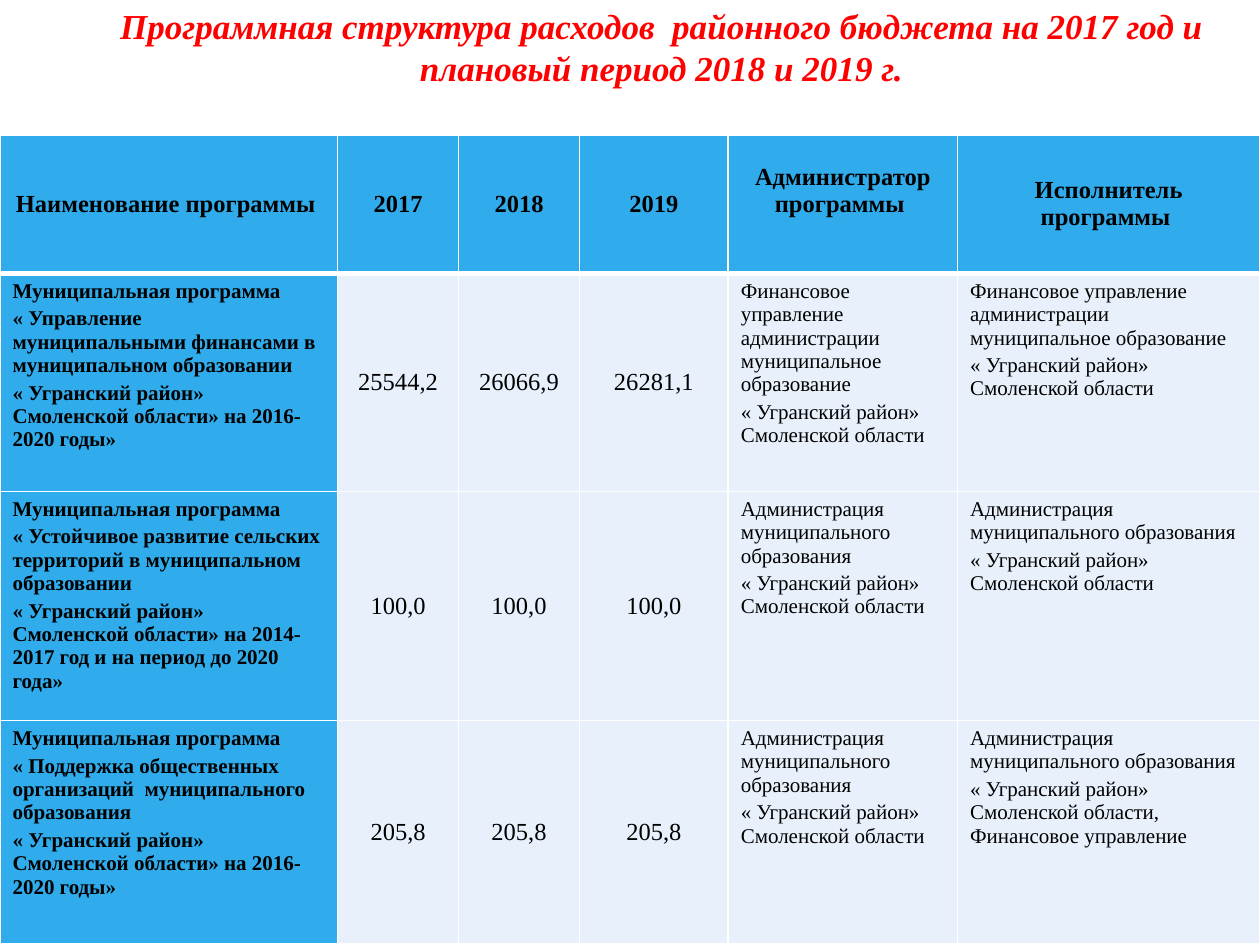
from lxml import etree
from pptx import Presentation
from pptx.dml.color import RGBColor
from pptx.enum.text import MSO_ANCHOR as Anchor, PP_ALIGN as Align
from pptx.oxml.ns import qn
from pptx.util import Inches, Pt

RED = RGBColor(0xFF, 0x00, 0x00)
BLACK = RGBColor(0x00, 0x00, 0x00)
BLUE = RGBColor(0x30, 0xAC, 0xEC)
PALE = RGBColor(0xE8, 0xF1, 0xFB)
WHITE = RGBColor(0xFF, 0xFF, 0xFF)
FONT = "Times New Roman"

TITLE = ("Программная структура расходов  районного бюджета на 2017 год "
         "и плановый период 2018 и 2019 г.")
COLUMN_WIDTHS = [2.68, 0.96, 0.96, 1.18, 1.82, 2.4]
ROW_HEIGHTS = [1.1, 1.73, 1.82, 1.77]
HEADINGS = ["Наименование программы ", "2017", "2018", "2019",
            "Администратор программы ", "Исполнитель программы "]

PROGRAM = "Муниципальная программа"
DISTRICT = "« Угранский район» Смоленской области"
FINANCE = ["Финансовое управление администрации  муниципальное образование",
           DISTRICT]
ADMINISTRATION = ["Администрация муниципального образования", DISTRICT]

# Program name, amounts for 2017-2019, administrator, executor
PROGRAMS = [
    ([PROGRAM,
      "« Управление  муниципальными финансами в муниципальном образовании",
      DISTRICT + "» на 2016-2020 годы»"],
     ["25544,2", "26066,9", "26281,1"], FINANCE, FINANCE),
    ([PROGRAM,
      "« Устойчивое развитие сельских территорий в муниципальном образовании",
      DISTRICT + "» на 2014-2017 год и на период до 2020 года»"],
     ["100,0"] * 3, ADMINISTRATION, ADMINISTRATION),
    ([PROGRAM,
      "« Поддержка общественных организаций  муниципального образования",
      DISTRICT + "» на 2016-2020 годы»"],
     ["205,8"] * 3, ADMINISTRATION,
     [ADMINISTRATION[0], DISTRICT + ", Финансовое управление"]),
]


def add_text(paragraph, text, size, color=BLACK, bold=False, italic=False):
    run = paragraph.add_run()
    run.text = text
    font = run.font
    font.name, font.size = FONT, Pt(size)
    font.bold, font.italic = bold, italic
    font.color.rgb = color


def set_borders(cell, bottom):
    """White lines on all four sides; the bottom one has its own width."""
    properties = cell._tc.get_or_add_tcPr()
    for side, width in (("L", 1), ("R", 1), ("T", 1), ("B", bottom)):
        line = etree.SubElement(properties, qn(f"a:ln{side}"), w=str(Pt(width)))
        fill = etree.SubElement(line, qn("a:solidFill"))
        etree.SubElement(fill, qn("a:srgbClr"), val=str(WHITE))


def fill_cell(cell, lines, size, fill, bold=False, centered=False, bottom=1):
    set_borders(cell, bottom)
    cell.fill.solid()
    cell.fill.fore_color.rgb = fill
    cell.vertical_anchor = Anchor.MIDDLE if centered else Anchor.TOP
    frame = cell.text_frame
    for index, line in enumerate(lines):
        paragraph = frame.add_paragraph() if index else frame.paragraphs[0]
        paragraph.alignment = Align.CENTER if centered else Align.LEFT
        if index:
            paragraph.space_before = Pt(2.4)
        add_text(paragraph, line, size, bold=bold)


def add_title(slide, left, top, width, height):
    box = slide.shapes.add_textbox(
        Inches(left), Inches(top), Inches(width), Inches(height))
    frame = box.text_frame
    frame.word_wrap = True
    frame.vertical_anchor = Anchor.MIDDLE
    heading = frame.paragraphs[0]
    heading.alignment = Align.CENTER
    add_text(heading, TITLE, 20, RED, bold=True, italic=True)


def add_program_table(slide, left, top, width, height):
    table = slide.shapes.add_table(
        len(ROW_HEIGHTS), len(COLUMN_WIDTHS), Inches(left), Inches(top),
        Inches(width), Inches(height)).table
    for column, column_width in zip(table.columns, COLUMN_WIDTHS):
        column.width = Inches(column_width)
    for row, row_height in zip(table.rows, ROW_HEIGHTS):
        row.height = Inches(row_height)

    # Header row
    for column, heading in enumerate(HEADINGS):
        fill_cell(table.cell(0, column), [heading], 14, BLUE,
                  bold=True, centered=True, bottom=3)
    # The administrator heading sits half a line higher
    table.cell(0, 4).margin_bottom = Inches(0.27)

    # One row for each program
    for row, (name, amounts, administrator, executor) in enumerate(PROGRAMS, 1):
        fill_cell(table.cell(row, 0), name, 12, BLUE, bold=True)
        for column, amount in enumerate(amounts, 1):
            fill_cell(table.cell(row, column), [amount], 14, PALE, centered=True)
        fill_cell(table.cell(row, 4), administrator, 12, PALE)
        fill_cell(table.cell(row, 5), executor, 12, PALE)


def main():
    deck = Presentation()
    deck.slide_width, deck.slide_height = Inches(10), Inches(7.5)
    slide = deck.slides.add_slide(deck.slide_layouts[6])
    add_title(slide, 0.75, 0.14, 9, 0.45)
    add_program_table(slide, 0, 1.07, 10, 6.43)
    deck.save("out.pptx")


if __name__ == "__main__":
    main()
